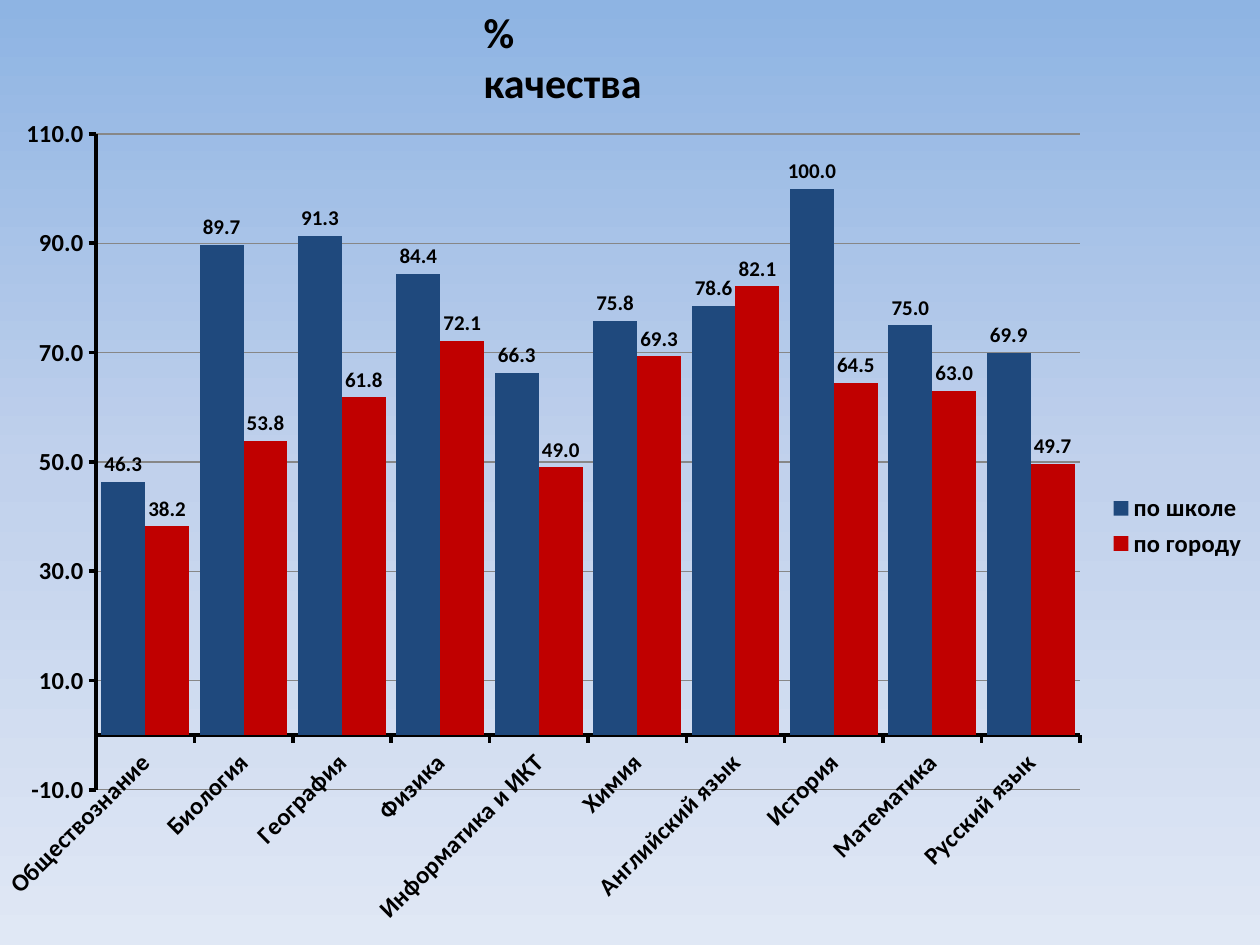
from copy import deepcopy

from lxml.etree import SubElement
from pptx import Presentation
from pptx.chart.data import CategoryChartData
from pptx.dml.color import RGBColor
from pptx.enum.chart import (XL_CHART_TYPE, XL_LABEL_POSITION as LabelPos,
                             XL_LEGEND_POSITION as LegendPos, XL_TICK_MARK as Tick)
from pptx.enum.text import MSO_ANCHOR, PP_ALIGN
from pptx.oxml.ns import qn
from pptx.util import Pt

# Content
TITLE = "% качества"
SUBJECTS = ["Обществознание", "Биология", "География", "Физика", "Информатика и ИКТ",
            "Химия", "Английский язык", "История", "Математика", "Русский язык"]
SERIES = [
    ("по школе", "1F497D", [46.3, 89.7, 91.3, 84.4, 66.3, 75.8, 78.6, 100, 75, 69.9]),
    ("по городу", "C00000", [38.2, 53.8, 61.8, 72.1, 49, 69.3, 82.1, 64.5, 63, 49.7]),
]
BACKGROUND = [(0, "8EB4E3"), (0.5, "C1D1EC"), (1, "E0E8F5")]
FONT, BLACK, GRID = "Calibri", "000000", "878787"

# Places in px: left, top, width, height
SLIDE_SIZE = (1260, 945)
TITLE_BOX = (471, 0, 223, 64)
CHART_BOX = (-21, 107, 1281, 838)
PLOT_BOX = (96, 134, 984, 656)
EMU_PER_PX = 914400 / 126


def px(*lengths):
    return [round(n * EMU_PER_PX) for n in lengths]


def color(hex_string):
    return RGBColor.from_string(hex_string)


def set_font(font, size):
    font.name, font.size, font.bold = FONT, Pt(size), True
    font.color.rgb = color(BLACK)


def set_line(line, hex_string, width):
    line.color.rgb = color(hex_string)
    line.width = Pt(width)


prs = Presentation()
prs.slide_width, prs.slide_height = px(*SLIDE_SIZE)
slide = prs.slides.add_slide(prs.slide_layouts[5])

# Background: three stops, top to bottom
backdrop = slide.background.fill
backdrop.gradient()
backdrop.gradient_angle = 270
stop_list = next(slide.element.iter(qn("a:gsLst")))
stop_list.insert(1, deepcopy(stop_list[0]))
for stop, (position, shade) in zip(backdrop.gradient_stops, BACKGROUND):
    stop.position = position
    stop.color.rgb = color(shade)

# Title
title = slide.shapes.title
title.left, title.top, title.width, title.height = px(*TITLE_BOX)
title_frame = title.text_frame
title_frame.word_wrap = False
title_frame.vertical_anchor = MSO_ANCHOR.TOP
heading = title_frame.paragraphs[0]
heading.alignment = PP_ALIGN.LEFT
heading_run = heading.add_run()
heading_run.text = TITLE
set_font(heading_run.font, 24)

# Chart
scores = CategoryChartData(number_format="0.0")
scores.categories = SUBJECTS
for name, _, values in SERIES:
    scores.add_series(name, values)
chart = slide.shapes.add_chart(XL_CHART_TYPE.COLUMN_CLUSTERED, *px(*CHART_BOX), scores).chart
chart.has_title = False
chart.font.name, chart.font.size = FONT, Pt(10)
chart.font.color.rgb = color(BLACK)

# Columns and their values
columns = chart.plots[0]
columns.gap_width, columns.overlap = 24, 0
columns.vary_by_categories = False
for series, (_, fill, _) in zip(columns.series, SERIES):
    series.format.fill.solid()
    series.format.fill.fore_color.rgb = color(fill)
    labels = series.data_labels
    labels.show_value = True
    labels.position = LabelPos.OUTSIDE_END
    labels.number_format, labels.number_format_is_linked = "0.0", False
    set_font(labels.font, 12)

# Axes
plot_area = next(chart.element.iter(qn("c:plotArea")))
subject_axis, score_axis = chart.category_axis, chart.value_axis
for axis in (subject_axis, score_axis):
    axis.major_tick_mark, axis.minor_tick_mark = Tick.OUTSIDE, Tick.NONE
    set_font(axis.tick_labels.font, 14)
    set_line(axis.format.line, BLACK, 2)
slant = next(plot_area.find(qn("c:catAx")).iter(qn("a:bodyPr")))
slant.set("rot", "-2700000")
slant.set("vert", "horz")
score_axis.minimum_scale, score_axis.maximum_scale, score_axis.major_unit = -10, 110, 20
score_axis.tick_labels.number_format = "0.0"
score_axis.tick_labels.number_format_is_linked = False
set_line(score_axis.major_gridlines.format.line, GRID, 0.75)

# Legend
chart.has_legend = True
chart.legend.position = LegendPos.RIGHT
chart.legend.include_in_layout = False
set_font(chart.legend.font, 14)

# Plot area as fractions of the chart
for old_layout in plot_area.findall(qn("c:layout")):
    plot_area.remove(old_layout)
layout = SubElement(plot_area, qn("c:layout"))
plot_area.insert(0, layout)
manual = SubElement(layout, qn("c:manualLayout"))
left, top, width, height = CHART_BOX
plot_left, plot_top, plot_width, plot_height = PLOT_BOX
for tag, value in [("layoutTarget", "inner"), ("xMode", "edge"), ("yMode", "edge"),
                   ("x", (plot_left - left) / width), ("y", (plot_top - top) / height),
                   ("w", plot_width / width), ("h", plot_height / height)]:
    SubElement(manual, qn(f"c:{tag}")).set("val", str(value))

prs.save("out.pptx")
